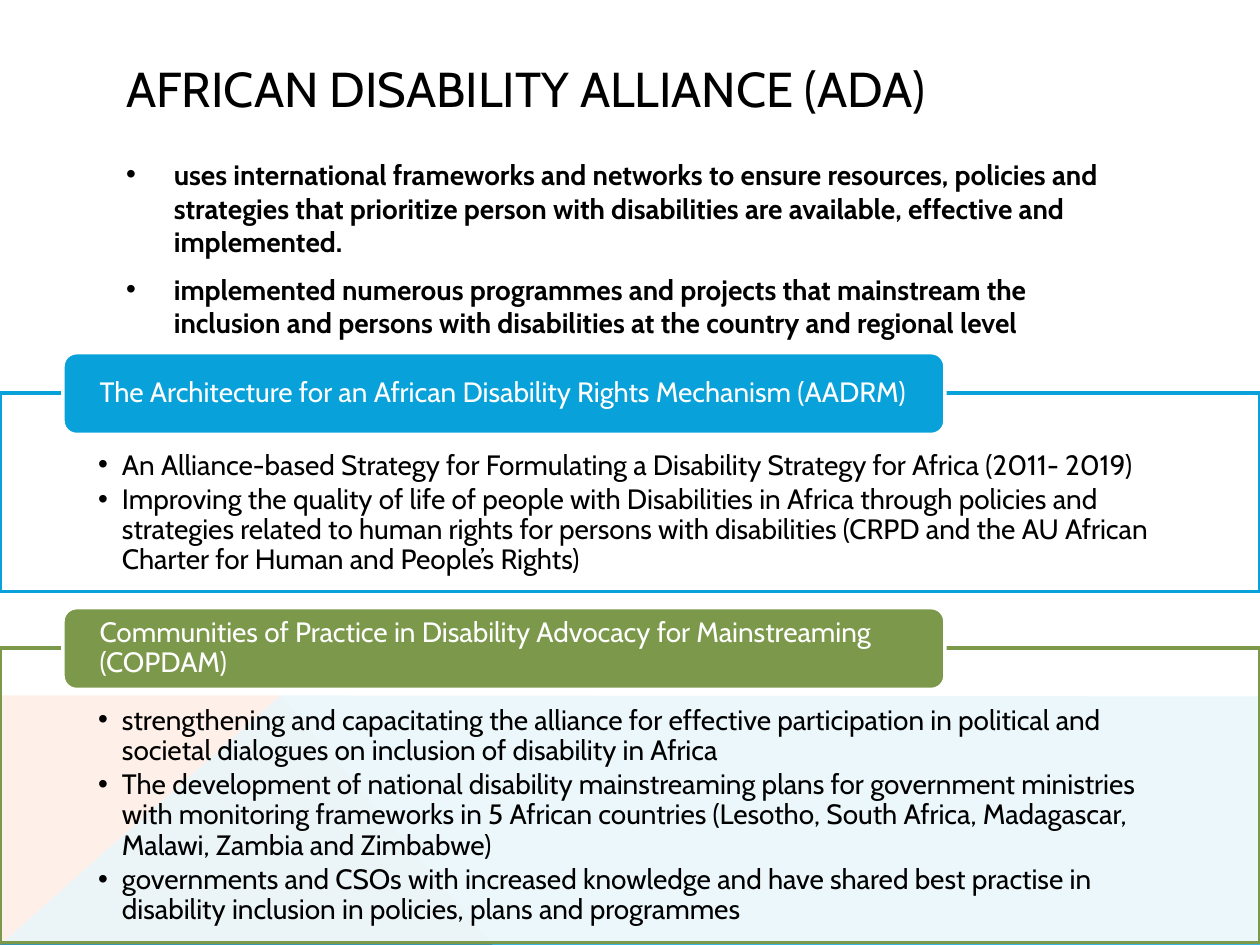
from dataclasses import dataclass
from pptx import Presentation
from pptx.dml.color import RGBColor
from pptx.enum.shapes import MSO_SHAPE as Shape
from pptx.enum.text import MSO_ANCHOR as Anchor, MSO_AUTO_SIZE as AutoSize, PP_ALIGN as Align
from pptx.oxml.ns import qn
from pptx.util import Cm, Pt
from lxml.etree import SubElement

FONT = "Cabin"
WIDTH, HEIGHT = 25.4, 19.05
WHITE, BLACK, ORANGE, BLUE, GREEN = "FFFFFF", "000000", "F96A1B", "08A1D9", "7C984A"


@dataclass
class Wedge:
    points: list[tuple[float, float]]
    color: str
    opacity: int = 100


@dataclass
class Section:
    top: float
    height: float
    color: str
    heading: str
    bullets: list[str]


TITLE = "AFRICAN DISABILITY ALLIANCE (ADA)"
INTRO = [
    "uses international frameworks and networks to ensure resources, policies and strategies "
    "that prioritize person with disabilities are available, effective and implemented.",
    "implemented numerous programmes and projects that mainstream the inclusion and persons "
    "with disabilities at the country and regional level",
]
WEDGES = [
    Wedge([(0, HEIGHT), (0, 14.02), (5.66, 14.02), (9.93, HEIGHT)], ORANGE),
    Wedge([(0, HEIGHT), (5.66, 14.02), (WIDTH, 14.04), (WIDTH, HEIGHT)], BLUE, 80),
]
SECTIONS = [
    Section(7.92, 4.01, BLUE,
            "The Architecture for an African Disability Rights Mechanism (AADRM)",
            ["An Alliance-based Strategy for Formulating a Disability Strategy for Africa "
             "(2011- 2019)",
             "Improving the quality of life of people with Disabilities in Africa through "
             "policies and strategies related to human rights for persons with disabilities "
             "(CRPD and the AU African Charter for Human and People’s Rights)"]),
    Section(13.06, 5.94, GREEN,
            "Communities of Practice in Disability Advocacy for Mainstreaming (COPDAM)",
            ["strengthening and capacitating the alliance for effective participation in "
             "political and societal dialogues on inclusion of disability in Africa",
             "The development of national disability mainstreaming plans for government "
             "ministries with monitoring frameworks in 5 African countries (Lesotho, South "
             "Africa, Madagascar, Malawi, Zambia and Zimbabwe)",
             "governments and CSOs with increased knowledge and have shared best practise in "
             "disability inclusion in policies, plans and programmes"]),
]


def set_all(obj, values: dict) -> None:
    for name, value in values.items():
        setattr(obj, name, value)


def paint(fill, color: str, opacity: int = 100) -> None:
    fill.solid()
    fill.fore_color.rgb = RGBColor.from_string(color)
    if opacity < 100:
        SubElement(fill._xPr.find(qn("a:solidFill"))[0], qn("a:alpha"), val=str(opacity * 1000))


def place(sp, left: float, top: float, width: float, height: float) -> None:
    set_all(sp, {"left": Cm(left), "top": Cm(top), "width": Cm(width), "height": Cm(height)})


def write(tf, texts: list[str], frame: dict, para: dict, color: str = BLACK,
          size: int = 16, bold: bool = False, indent: float = 0) -> None:
    """Fill a text frame; a positive indent in cm makes the paragraphs bulleted."""
    set_all(tf, {"word_wrap": True, "auto_size": AutoSize.NONE} | frame)
    for i, text in enumerate(texts):
        p = tf.add_paragraph() if i else tf.paragraphs[0]
        set_all(p, {"alignment": Align.LEFT, "space_before": Pt(0)} | para)
        r = p.add_run()
        r.text = text
        set_all(r.font, {"name": FONT, "size": Pt(size), "bold": bold})
        paint(r.font.fill, color)
        if indent:
            pPr = p._p.get_or_add_pPr()
            pPr.set("marL", str(Cm(indent)))
            pPr.set("indent", str(-Cm(indent)))
            SubElement(pPr, qn("a:buFont"), typeface="Arial")
            SubElement(pPr, qn("a:buChar"), char="•")


def draw_wedge(s, wedge: Wedge) -> None:
    start, *rest = [(Cm(x), Cm(y)) for x, y in wedge.points]
    builder = s.shapes.build_freeform(*start)
    builder.add_line_segments(rest)
    sp = builder.convert_to_shape()
    sp.shadow.inherit = False
    sp.line.fill.background()
    paint(sp.fill, wedge.color, wedge.opacity)


def add_box(s, kind, box: tuple, fill: str, line: str, opacity: int = 100):
    sp = s.shapes.add_shape(kind, *map(Cm, box))
    sp.shadow.inherit = False
    paint(sp.fill, fill, opacity)
    paint(sp.line.fill, line)
    sp.line.width = Pt(2)
    return sp


def draw_section(s, section: Section) -> None:
    panel = add_box(s, Shape.RECTANGLE, (0, section.top, WIDTH, section.height),
                    WHITE, section.color, 90)
    write(panel.text_frame, section.bullets,
          {"margin_left": Cm(1.98), "margin_right": Cm(1.98), "margin_top": Cm(1.17),
           "margin_bottom": Cm(0.3), "vertical_anchor": Anchor.TOP},
          {"line_spacing": 0.9, "space_after": Pt(2.4)}, indent=0.48)
    label = add_box(s, Shape.ROUNDED_RECTANGLE, (1.27, section.top - 0.81, 17.78, 1.65),
                    section.color, WHITE)
    write(label.text_frame, [section.heading],
          {"margin_left": Cm(0.66), "margin_right": Cm(0.66), "margin_top": 0,
           "margin_bottom": 0, "vertical_anchor": Anchor.MIDDLE},
          {"line_spacing": 0.9}, WHITE)


def main() -> None:
    prs = Presentation()
    set_all(prs, {"slide_width": Cm(WIDTH), "slide_height": Cm(HEIGHT)})
    s = prs.slides.add_slide(prs.slide_layouts[1])
    paint(s.background.fill, WHITE)
    title, body = s.placeholders
    for wedge in WEDGES:
        draw_wedge(s, wedge)
    place(title, 2.29, 1.02, 20.88, 1.52)
    write(title.text_frame, [TITLE], {"vertical_anchor": Anchor.MIDDLE}, {}, size=28)
    place(body, 2.29, 3.05, 20.88, 9.93)
    write(body.text_frame, INTRO, {"vertical_anchor": Anchor.TOP},
          {"space_before": Pt(8)}, bold=True, indent=0.96)
    for section in SECTIONS:
        draw_section(s, section)
    prs.save("out.pptx")


if __name__ == "__main__":
    main()
